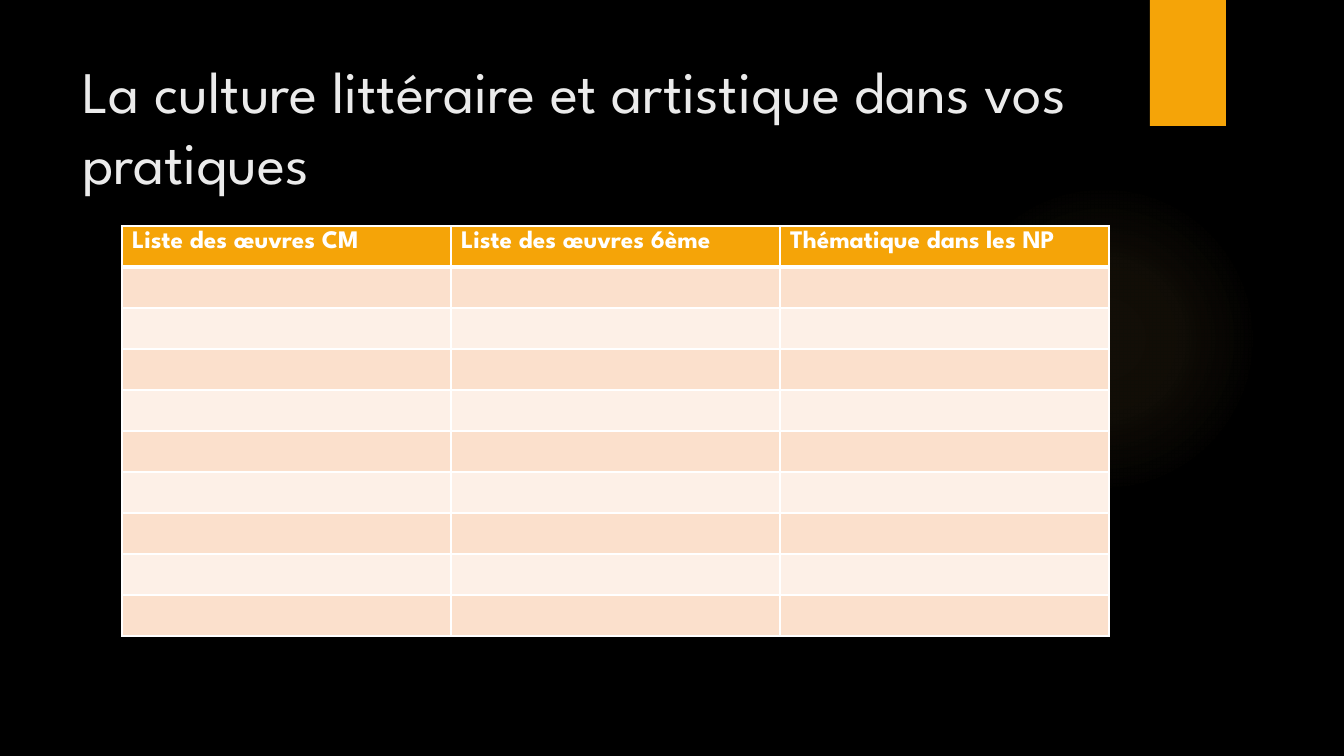
from pptx import Presentation
from pptx.dml.color import RGBColor
from pptx.enum.shapes import MSO_SHAPE
from pptx.enum.text import MSO_ANCHOR, MSO_AUTO_SIZE, PP_ALIGN
from pptx.oxml import parse_xml
from pptx.oxml.ns import nsdecls, qn
from pptx.util import Pt

# Content
TITLE = "La culture littéraire et artistique dans vos pratiques"
HEADERS = ["Liste des œuvres CM", "Liste des œuvres 6ème", "Thématique dans les NP"]
EMPTY_ROWS = 9

# Style
FONT = "League Spartan"
BLACK = RGBColor(0x00, 0x00, 0x00)
WHITE = RGBColor(0xFF, 0xFF, 0xFF)
TITLE_GREY = RGBColor(0xEB, 0xEB, 0xEB)
ORANGE = RGBColor(0xF5, 0xA4, 0x08)
GLOW = RGBColor(0xFA, 0xC9, 0x6A)
BANDS = [RGBColor(0xFB, 0xE0, 0xCC), RGBColor(0xFD, 0xF0, 0xE7)]
GLOW_STOPS = [(0, 7), (36, 6), (69, 0)]  # position %, opacity %

# Layout in px: left, top, width, height
SLIDE_SIZE = (1344, 756)
TITLE_BOX = (72, 50, 1037, 154)
GLOW_BOX = (949, 184, 310, 310)
TAB_BOX = (1150, 0, 76, 126)
TABLE_LEFT, TABLE_TOP = 122, 226
COLUMN_WIDTH, ROW_HEIGHT = 329, 41
EMU_PER_PX = 914400 / 100.8


def px(*lengths):
    return [round(length * EMU_PER_PX) for length in lengths]


def add_text(paragraph, text, size, color, bold=False):
    run = paragraph.add_run()
    run.text = text
    run.font.name = FONT
    run.font.size = Pt(size)
    run.font.bold = bold
    run.font.color.rgb = color


def add_plain_shape(slide, kind, box, color):
    shape = slide.shapes.add_shape(kind, *px(*box))
    shape.fill.solid()
    shape.fill.fore_color.rgb = color
    shape.line.fill.background()
    shape.shadow.inherit = False
    return shape


def set_borders(cell, widths):
    properties = cell._tc.get_or_add_tcPr()
    for position, (side, width) in enumerate(widths.items()):
        properties.insert(position, parse_xml(
            f'<a:ln{side} {nsdecls("a")} w="{Pt(width)}"><a:solidFill>'
            f'<a:srgbClr val="{WHITE}"/></a:solidFill></a:ln{side}>'))


def add_glow(slide):
    glow = add_plain_shape(slide, MSO_SHAPE.OVAL, GLOW_BOX, GLOW)
    stops = "".join(
        f'<a:gs pos="{position * 1000}"><a:srgbClr val="{GLOW}">'
        f'<a:alpha val="{opacity * 1000}"/></a:srgbClr></a:gs>'
        for position, opacity in GLOW_STOPS)
    gradient = parse_xml(
        f'<a:gradFill {nsdecls("a")}><a:gsLst>{stops}</a:gsLst><a:path path="circle">'
        '<a:fillToRect l="50000" t="50000" r="50000" b="50000"/></a:path></a:gradFill>')
    properties = glow._element.spPr
    properties.replace(properties.find(qn("a:solidFill")), gradient)


def add_tab(slide):
    tab = add_plain_shape(slide, MSO_SHAPE.RECTANGLE, TAB_BOX, ORANGE)
    tab._element.spPr.find(qn("a:effectLst")).append(parse_xml(
        f'<a:outerShdw {nsdecls("a")} blurRad="{Pt(3)}" dist="{Pt(2)}" dir="5400000" '
        f'rotWithShape="0"><a:srgbClr val="{BLACK}"><a:alpha val="45000"/>'
        '</a:srgbClr></a:outerShdw>'))


def add_title(slide):
    title = slide.shapes.title
    title.left, title.top, title.width, title.height = px(*TITLE_BOX)
    frame = title.text_frame
    frame.word_wrap = True
    frame.auto_size = MSO_AUTO_SIZE.NONE
    frame.vertical_anchor = MSO_ANCHOR.TOP
    frame.paragraphs[0].alignment = PP_ALIGN.LEFT
    add_text(frame.paragraphs[0], TITLE, 42, TITLE_GREY)


def add_works_table(slide):
    row_count, column_count = EMPTY_ROWS + 1, len(HEADERS)
    table = slide.shapes.add_table(
        row_count, column_count,
        *px(TABLE_LEFT, TABLE_TOP, COLUMN_WIDTH * column_count, ROW_HEIGHT * row_count)).table
    for column in table.columns:
        column.width = px(COLUMN_WIDTH)[0]
    for row_index, row in enumerate(table.rows):
        row.height = px(ROW_HEIGHT)[0]
        for column_index, cell in enumerate(row.cells):
            is_header = row_index == 0
            cell.fill.solid()
            cell.fill.fore_color.rgb = ORANGE if is_header else BANDS[(row_index - 1) % 2]
            set_borders(cell, {"L": 1, "R": 1, "T": 3 if row_index == 1 else 1,
                               "B": 3 if is_header else 1})
            if is_header:
                add_text(cell.text_frame.paragraphs[0], HEADERS[column_index], 18, WHITE, True)


def main():
    presentation = Presentation()
    presentation.slide_width, presentation.slide_height = px(*SLIDE_SIZE)
    slide = presentation.slides.add_slide(presentation.slide_layouts[5])
    slide.background.fill.solid()
    slide.background.fill.fore_color.rgb = BLACK

    # Decoration, title, then table
    add_glow(slide)
    add_tab(slide)
    add_title(slide)
    add_works_table(slide)
    presentation.save("out.pptx")


if __name__ == "__main__":
    main()
